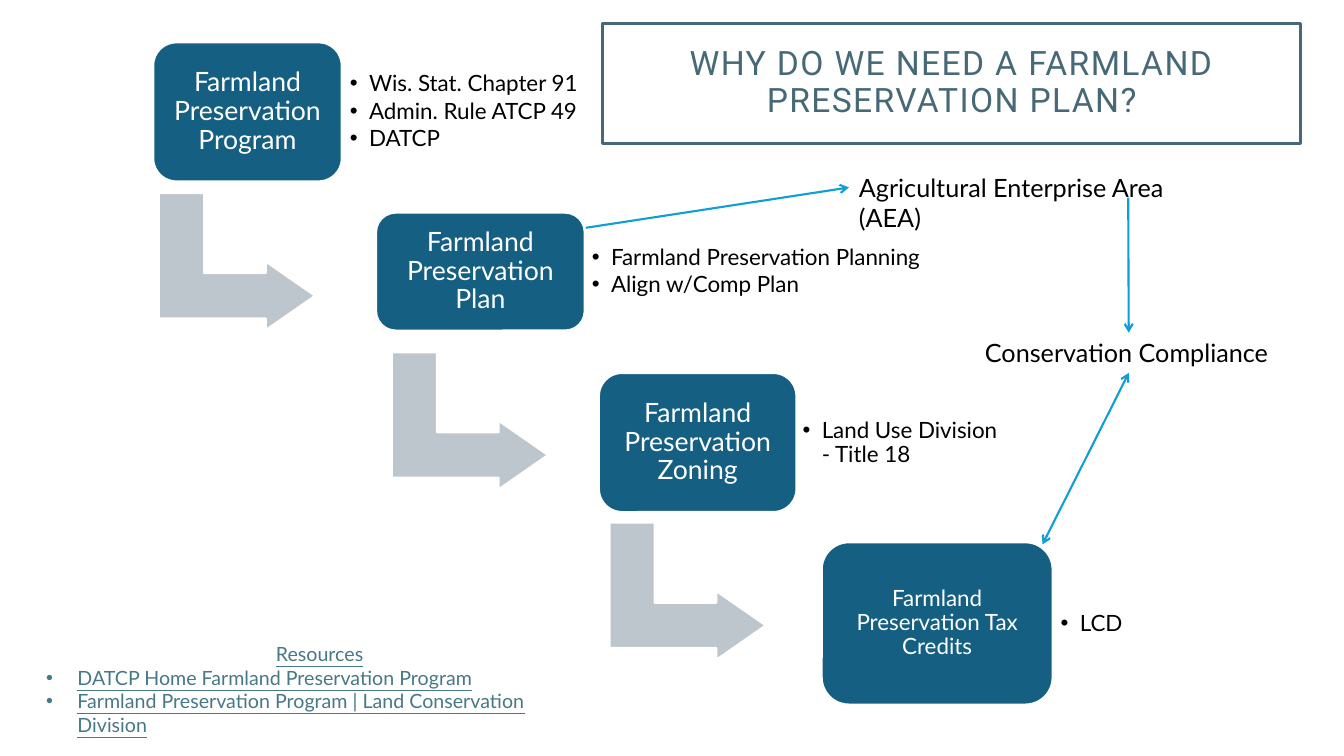
"""Build the slide on why a farmland preservation plan is needed."""
from dataclasses import dataclass
from typing import Optional

from lxml.etree import SubElement
from pptx import Presentation
from pptx.dml.color import RGBColor
from pptx.enum.shapes import MSO_CONNECTOR, MSO_SHAPE
from pptx.enum.text import MSO_ANCHOR, PP_ALIGN
from pptx.oxml.ns import qn
from pptx.util import Inches, Pt

WHITE = RGBColor(0xFF, 0xFF, 0xFF)
BLACK = RGBColor(0, 0, 0)
TEAL = RGBColor(0x15, 0x60, 0x82)
GREY = RGBColor(0xBD, 0xC5, 0xCD)
BLUE = RGBColor(0x0F, 0x9E, 0xD5)
LINK = RGBColor(0x46, 0x78, 0x86)
SLATE = RGBColor(0x47, 0x69, 0x77)


@dataclass(frozen=True)
class Box:
    left: float
    top: float
    width: float
    height: float

    def emu(self) -> tuple:
        return tuple(Inches(n) for n in (self.left, self.top, self.width, self.height))


@dataclass(frozen=True)
class Step:
    label: str
    size: int
    inset: float
    tile: Box
    details: tuple
    details_area: Box
    bend: Optional[tuple] = None


STEPS = (
    Step("Farmland Preservation Program", 19, 0.08, Box(1.52, 0.42, 1.87, 1.38),
         ("Wis. Stat. Chapter 91", "Admin. Rule ATCP 49", "DATCP"),
         Box(3.4, 0.46, 3.38, 1.3), (1.67, 1.82)),
    Step("Farmland Preservation Plan", 19, 0.08, Box(3.73, 2.11, 2.07, 1.17),
         ("Farmland Preservation Planning", "Align w/Comp Plan"),
         Box(5.8, 2.32, 3.58, 0.75), (3.98, 3.4)),
    Step("Farmland Preservation Zoning", 19, 0.08, Box(5.94, 3.7, 1.96, 1.38),
         ("Land Use Division - Title 18",),
         Box(7.89, 3.75, 2.19, 1.3), (6.14, 5.09)),
    Step("Farmland Preservation Tax Credits", 16, 0.07, Box(8.15, 5.38, 2.29, 1.61),
         ("LCD",), Box(10.45, 5.54, 1.67, 1.3)),
)
RESOURCES = (
    "DATCP Home Farmland Preservation Program",
    "Farmland Preservation Program | Land Conservation Division",
)


def set_frame(frame, anchor, inset: Optional[float] = None) -> None:
    frame.word_wrap = True
    frame.vertical_anchor = anchor
    if inset is not None:
        frame.margin_left = frame.margin_right = Inches(inset)
        frame.margin_top = frame.margin_bottom = Inches(inset)


def write(paragraph, text: str, size: int, color: RGBColor, face: str = "Lato",
          align=PP_ALIGN.LEFT, hang: float = 0, spacing: float = 1,
          after: float = 0) -> None:
    paragraph.text = text
    paragraph.alignment = align
    paragraph.line_spacing = spacing
    paragraph.space_after = Pt(after)
    if hang:
        properties = paragraph._p.get_or_add_pPr()
        properties.set("marL", str(Inches(hang)))
        properties.set("indent", str(-Inches(hang)))
        SubElement(properties, qn("a:buFont")).set("typeface", "Arial")
        SubElement(properties, qn("a:buChar")).set("char", "•")
    paragraph.font.name = face
    paragraph.font.size = Pt(size)
    paragraph.font.color.rgb = color


def add_block(slide, kind, box: Box, fill: Optional[RGBColor], edge: RGBColor,
              weight: float):
    block = slide.shapes.add_shape(kind, *box.emu())
    block.shadow.inherit = False
    if fill is None:
        block.fill.background()
    else:
        block.fill.solid()
        block.fill.fore_color.rgb = fill
    block.line.color.rgb = edge
    block.line.width = Pt(weight)
    return block


def add_step(slide, step: Step) -> None:
    if step.bend:
        bend = add_block(slide, MSO_SHAPE.BENT_UP_ARROW, Box(*step.bend, 1.36, 1.55),
                         GREY, WHITE, 1.5)
        bend.rotation = 90
        for index, ratio in enumerate((0.33, 0.25, 0.36)):
            bend.adjustments[index] = ratio
    tile = add_block(slide, MSO_SHAPE.ROUNDED_RECTANGLE, step.tile, TEAL, WHITE, 1.5)
    set_frame(tile.text_frame, MSO_ANCHOR.MIDDLE, step.inset)
    write(tile.text_frame.paragraphs[0], step.label, step.size, WHITE,
          align=PP_ALIGN.CENTER, spacing=0.9)
    listing = slide.shapes.add_textbox(*step.details_area.emu()).text_frame
    set_frame(listing, MSO_ANCHOR.MIDDLE, 0.07)
    for index, detail in enumerate(step.details):
        paragraph = listing.add_paragraph() if index else listing.paragraphs[0]
        write(paragraph, detail, 16, BLACK, hang=0.19, spacing=0.9, after=2.4)


def add_topic(slide, text: str, box: Box):
    topic = slide.shapes.add_textbox(*box.emu())
    set_frame(topic.text_frame, MSO_ANCHOR.TOP)
    write(topic.text_frame.paragraphs[0], text, 18, BLACK)
    return topic


def add_arrow(slide, start: tuple, end: tuple, ends: tuple = ("tailEnd",)):
    arrow = slide.shapes.add_connector(
        MSO_CONNECTOR.STRAIGHT, *(Inches(n) for n in start + end))
    arrow.line.color.rgb = BLUE
    arrow.line.width = Pt(1.5)
    for tip in ends:
        SubElement(arrow.line._get_or_add_ln(), qn(f"a:{tip}")).set("type", "arrow")
    SubElement(arrow._element.spPr, qn("a:effectLst"))
    return arrow


def add_resources(slide) -> None:
    resources = slide.shapes.add_textbox(*Box(0.36, 6.32, 5.62, 0.81).emu()).text_frame
    set_frame(resources, MSO_ANCHOR.TOP)
    write(resources.paragraphs[0], "Resources", 14, LINK, align=PP_ALIGN.CENTER)
    for resource in RESOURCES:
        write(resources.add_paragraph(), resource, 14, LINK, hang=0.31)
    for paragraph in resources.paragraphs:
        paragraph.font.underline = True


def add_title(slide) -> None:
    title = add_block(slide, MSO_SHAPE.RECTANGLE, Box(5.98, 0.23, 6.92, 1.19),
                      None, SLATE, 2.25)
    set_frame(title.text_frame, MSO_ANCHOR.MIDDLE)
    heading = title.text_frame.paragraphs[0]
    write(heading, "WHY DO WE NEED A FARMLAND PRESERVATION PLAN?", 24, SLATE,
          face="Roboto", align=PP_ALIGN.CENTER, spacing=0.9)
    heading._p.get_or_add_pPr().get_or_add_defRPr().set("spc", "100")


def main() -> None:
    deck = Presentation()
    deck.slide_width, deck.slide_height = Inches(13.33), Inches(7.5)
    slide = deck.slides.add_slide(deck.slide_layouts[6])
    for step in STEPS:
        add_step(slide, step)
    compliance = add_topic(slide, "Conservation Compliance", Box(9.67, 3.3, 3.05, 0.4))
    enterprise = add_topic(slide, "Agricultural Enterprise Area (AEA)",
                           Box(8.42, 1.66, 3.85, 0.4))
    plan_to_area = add_arrow(slide, (5.81, 2.26), (8.42, 1.86))
    plan_to_area.end_connect(enterprise, 1)
    area_to_compliance = add_arrow(slide, (11.19, 1.96), (11.19, 3.3))
    area_to_compliance.end_connect(compliance, 0)
    credits_to_compliance = add_arrow(slide, (10.34, 5.4), (11.19, 3.7),
                                      ("headEnd", "tailEnd"))
    credits_to_compliance.end_connect(compliance, 2)
    add_resources(slide)
    add_title(slide)
    deck.save("out.pptx")


if __name__ == "__main__":
    main()
